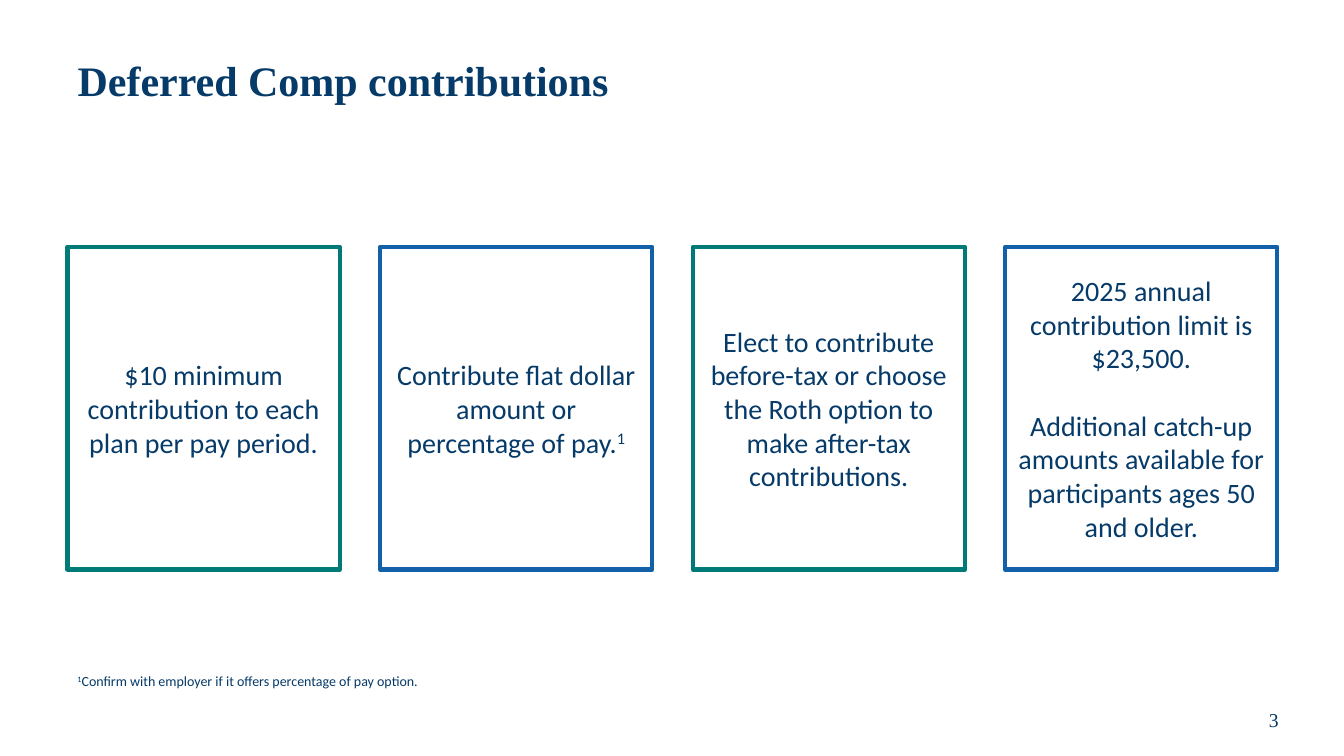
from dataclasses import dataclass

from pptx import Presentation
from pptx.dml.color import RGBColor
from pptx.enum.shapes import MSO_SHAPE as Shape
from pptx.enum.text import MSO_ANCHOR as Anchor, PP_ALIGN as Align
from pptx.util import Inches, Pt

COLORS = {"navy": "063A68", "blue": "1260A7", "teal": "007A77"}
BODY_FONT, HEAD_FONT = "Calibri", "Times New Roman"

CARD_LEFT, CARD_TOP = 0.67, 2.45
CARD_WIDTH, CARD_HEIGHT, CARD_GAP = 2.7, 3.2, 0.4


@dataclass
class Card:
    color: str
    paragraphs: list[str]
    note_mark: str = ""


CARDS = [
    Card("teal", ["$10 minimum contribution to each plan per pay period."]),
    Card("blue", ["Contribute flat dollar amount or percentage of pay."], "1"),
    Card("teal", ["Elect to contribute before-tax or choose the Roth option "
                  "to make after-tax contributions."]),
    Card("blue", ["2025 annual contribution limit is $23,500.",
                  "Additional catch-up amounts available for participants "
                  "ages 50 and older."]),
]


def rgb(name: str) -> RGBColor:
    return RGBColor.from_string(COLORS[name])


def style(para, size: float, font: str = BODY_FONT, align=Align.LEFT) -> None:
    para.alignment = align
    para.font.size = Pt(size)
    para.font.name = font
    para.font.color.rgb = rgb("navy")


def add_superscript(para, text: str) -> None:
    span = para.add_run()
    span.text = text
    span.font._element.set("baseline", "30000")


def add_card(page, index: int, card: Card) -> None:
    left = CARD_LEFT + index * (CARD_WIDTH + CARD_GAP)
    box = page.shapes.add_shape(Shape.RECTANGLE, Inches(left), Inches(CARD_TOP),
                                Inches(CARD_WIDTH), Inches(CARD_HEIGHT))
    box.shadow.inherit = False
    box.fill.background()
    box.line.color.rgb = rgb(card.color)
    box.line.width = Pt(3)

    frame = box.text_frame
    frame.word_wrap = True
    frame.vertical_anchor = Anchor.MIDDLE
    frame.margin_left = frame.margin_right = Inches(0.1)
    frame.margin_top = frame.margin_bottom = Inches(0.1)
    for number, text in enumerate(card.paragraphs):
        para = frame.add_paragraph() if number else frame.paragraphs[0]
        para.add_run().text = text
        style(para, 20, align=Align.CENTER)
        if number:
            para.space_before = Pt(24)
    if card.note_mark:
        add_superscript(frame.paragraphs[-1], card.note_mark)


def add_text_box(page, left: float, top: float, width: float, height: float):
    box = page.shapes.add_textbox(Inches(left), Inches(top),
                                  Inches(width), Inches(height))
    box.text_frame.word_wrap = True
    return box.text_frame


def main() -> None:
    deck = Presentation()
    deck.slide_width, deck.slide_height = Inches(13.33), Inches(7.5)
    page = deck.slides.add_slide(deck.slide_layouts[5])

    # Title
    title = page.shapes.title
    title.left, title.top = Inches(0.67), Inches(0.25)
    title.width, title.height = Inches(12), Inches(1.15)
    title.text_frame.vertical_anchor = Anchor.MIDDLE
    title.text_frame.text = "Deferred Comp contributions"
    heading = title.text_frame.paragraphs[0]
    style(heading, 30, HEAD_FONT)
    heading.font.bold = True
    heading.line_spacing = 0.9

    # Row of framed cards
    for index, card in enumerate(CARDS):
        add_card(page, index, card)

    # Footnote
    footnote = add_text_box(page, 0.67, 6.62, 6.21, 0.27).paragraphs[0]
    add_superscript(footnote, "1")
    footnote.add_run().text = ("Confirm with employer if it offers "
                               "percentage of pay option.")
    style(footnote, 10)

    # Page number
    number_frame = add_text_box(page, 12.05, 6.89, 1.17, 0.5)
    number_frame.vertical_anchor = Anchor.MIDDLE
    number_frame.text = "3"
    style(number_frame.paragraphs[0], 14, HEAD_FONT, Align.CENTER)

    deck.save("out.pptx")


if __name__ == "__main__":
    main()
